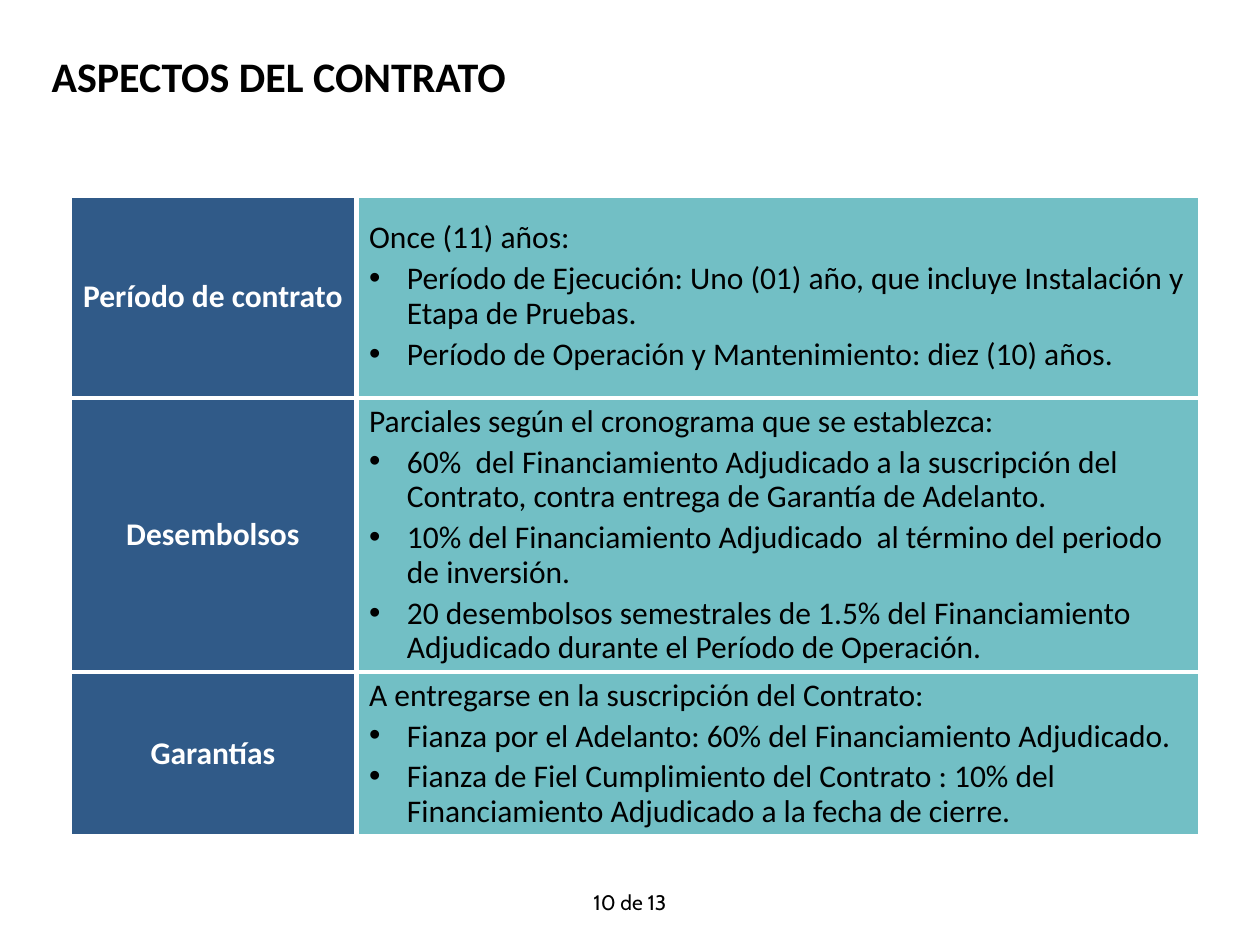
from lxml.etree import SubElement as Sub
from pptx import Presentation
from pptx.dml.color import RGBColor
from pptx.enum.text import MSO_ANCHOR as Anchor, PP_ALIGN as Align
from pptx.oxml.ns import qn
from pptx.util import Inches, Pt

TITLE = "ASPECTOS DEL CONTRATO"
PAGE = "10 de 13"
ROWS = [
    ("Período de contrato", 1.61, "Once (11) años:", [
        "Período de Ejecución: Uno (01) año, que incluye Instalación y Etapa de Pruebas.",
        "Período de Operación y Mantenimiento: diez (10) años.",
    ]),
    ("Desembolsos", 2.17, "Parciales según el cronograma que se establezca:", [
        "60%  del Financiamiento Adjudicado a la suscripción del Contrato, contra entrega de Garantía de Adelanto.",
        "10% del Financiamiento Adjudicado  al término del periodo de inversión.",
        "20 desembolsos semestrales de 1.5% del Financiamiento Adjudicado durante el Período de Operación.",
    ]),
    ("Garantías", 1.3, "A entregarse en la suscripción del Contrato:", [
        "Fianza por el Adelanto: 60% del Financiamiento Adjudicado.",
        "Fianza de Fiel Cumplimiento del Contrato : 10% del Financiamiento Adjudicado a la fecha de cierre.",
    ]),
]
WIDTHS = [2.28, 6.7]
BLUE, TEAL, BLACK, WHITE = "305A88", "72BFC5", "000000", "FFFFFF"


def paint(fill, color):
    fill.solid()
    fill.fore_color.rgb = RGBColor.from_string(color)


def style(para, size, color=BLACK, bold=False, face="Calibri"):
    for run in para.runs:
        font = run.font
        font.name, font.size, font.bold = face, Pt(size), bold
        font.color.rgb = RGBColor.from_string(color)


def border(cell):
    props = cell._tc.get_or_add_tcPr()
    for side in ("lnL", "lnR", "lnT", "lnB"):
        line = Sub(props, qn("a:" + side), w=str(Pt(3)))
        Sub(Sub(line, qn("a:solidFill")), qn("a:srgbClr"), val=WHITE)


def indent(para, bullet):
    props = para._p.get_or_add_pPr()
    props.set("marL", str(Inches(0.3)))
    props.set("indent", str(Inches(-0.3)))
    if bullet:
        Sub(props, qn("a:buSzPct"), val="103000")
        Sub(props, qn("a:buFont"), typeface="Arial")
        Sub(props, qn("a:buChar"), char="•")
    else:
        Sub(props, qn("a:buNone"))


def write(cell, lines, fill):
    border(cell)
    paint(cell.fill, fill)
    cell.vertical_anchor = Anchor.MIDDLE
    cell.text_frame.text = "\n".join(lines)
    return cell.text_frame.paragraphs


def main():
    prs = Presentation()
    prs.slide_width, prs.slide_height = Inches(10), Inches(7.5)
    slide = prs.slides.add_slide(prs.slide_layouts[5])

    title = slide.shapes.title
    title.left, title.top = Inches(0.31), Inches(0.29)
    title.width, title.height = Inches(5), Inches(0.62)
    frame = title.text_frame
    frame.text = TITLE
    frame.vertical_anchor = Anchor.MIDDLE
    frame.paragraphs[0].alignment = Align.LEFT
    style(frame.paragraphs[0], 24, bold=True)

    high = sum(row[1] for row in ROWS)
    table = slide.shapes.add_table(
        len(ROWS), len(WIDTHS), Inches(0.55), Inches(1.55),
        Inches(sum(WIDTHS)), Inches(high)).table
    table.first_row = table.horz_banding = False
    for col, width in zip(table.columns, WIDTHS):
        col.width = Inches(width)

    for i, (label, height, lead, items) in enumerate(ROWS):
        table.rows[i].height = Inches(height)
        head = write(table.cell(i, 0), [label], BLUE)[0]
        head.alignment = Align.CENTER
        style(head, 18, WHITE, True)
        for n, para in enumerate(write(table.cell(i, 1), [lead, *items], TEAL)):
            indent(para, n > 0)
            para.line_spacing = 0.9
            if n:
                para.space_before = Pt(3.6)
            style(para, 18)

    box = slide.shapes.add_textbox(
        Inches(4.57), Inches(7.01), Inches(0.86), Inches(0.39))
    frame = box.text_frame
    frame.word_wrap = True
    frame.text = PAGE
    frame.paragraphs[0].alignment = Align.CENTER
    style(frame.paragraphs[0], 12, face="Cabin")

    prs.save("out.pptx")


if __name__ == "__main__":
    main()
